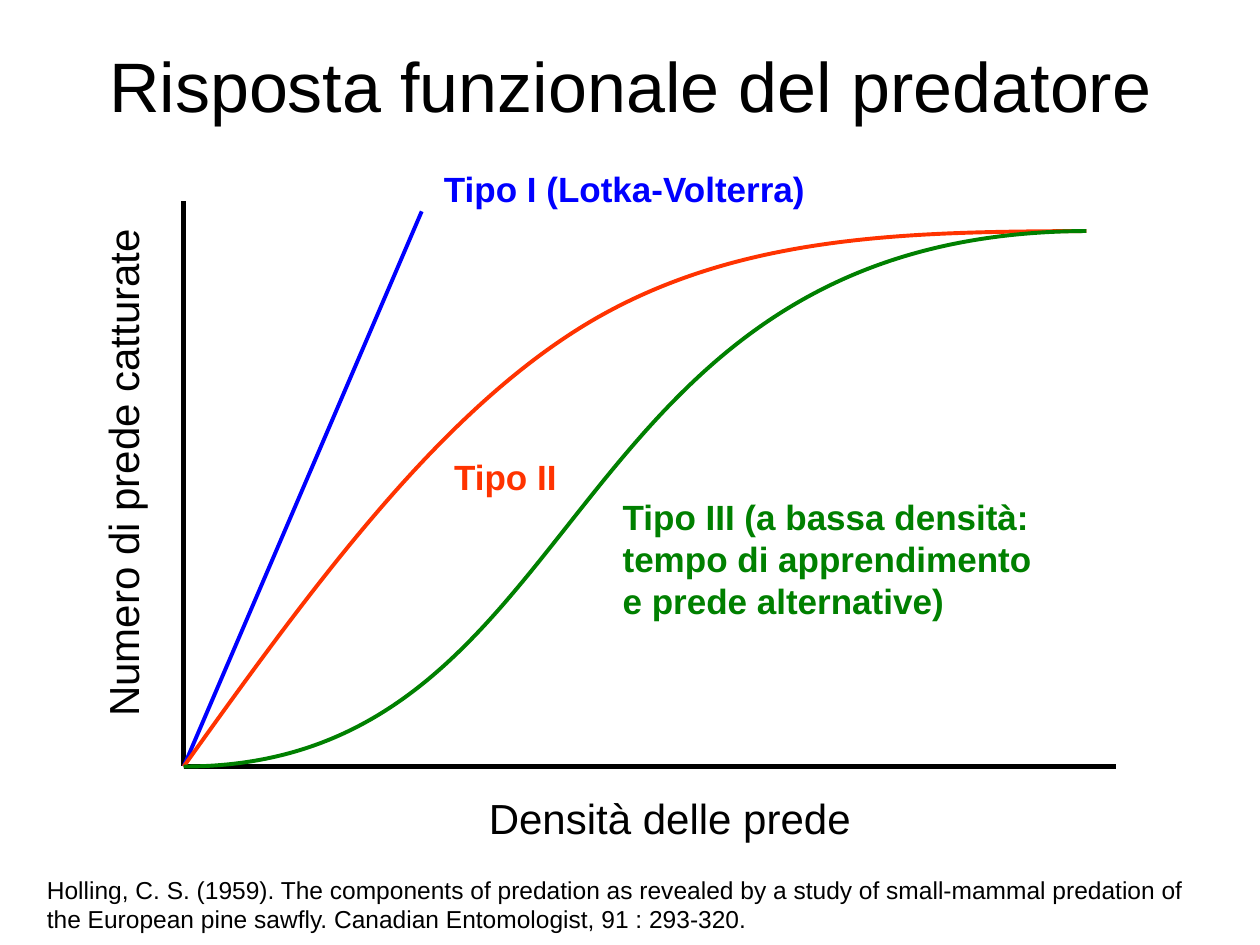
from lxml.etree import SubElement
from pptx import Presentation
from pptx.dml.color import RGBColor
from pptx.enum.shapes import MSO_CONNECTOR as Connector
from pptx.enum.text import MSO_ANCHOR as Anchor, MSO_AUTO_SIZE as AutoSize, PP_ALIGN as Align
from pptx.oxml.ns import qn
from pptx.util import Pt

FONT = "Arial"
COLORS = {"black": "000000", "type_1": "0000FF", "type_2": "FF3300", "type_3": "008000"}
ORIGIN = (105, 438)
PLATEAU = (620.8, 132)


def rgb(name):
    return RGBColor.from_string(COLORS[name])


def write_text(shape, text, size=20, color="black", bold=False, align=Align.LEFT,
               anchor=Anchor.TOP):
    frame = shape.text_frame
    frame.word_wrap = True
    frame.vertical_anchor = anchor
    paragraph = frame.paragraphs[0]
    paragraph.alignment = align
    run = paragraph.add_run()
    run.text = text
    font = run.font
    font.name, font.size, font.bold = FONT, Pt(size), bold
    font.color.rgb = rgb(color)


def add_title(slide, text):
    title = slide.shapes.title
    title.left, title.top, title.width, title.height = Pt(36), Pt(3.2), Pt(648), Pt(90)
    write_text(title, text, size=40, align=Align.CENTER, anchor=Anchor.MIDDLE)


def add_label(slide, text, box, rotation=0, **text_format):
    label = slide.shapes.add_textbox(*map(Pt, box))
    label.rotation = rotation
    write_text(label, text, **text_format)
    label.text_frame.auto_size = AutoSize.SHAPE_TO_FIT_TEXT


def add_line(slide, start, end, color="black", width=3):
    line = slide.shapes.add_connector(Connector.STRAIGHT, *map(Pt, start + end))
    line.line.color.rgb = rgb(color)
    line.line.width = Pt(width)
    SubElement(line._element.spPr, qn("a:effectLst"))


def bend_segments(shape):
    """Turn every three straight segments into one cubic Bezier segment."""
    outline = next(shape._element.iter(qn("a:path")))
    segments = outline.findall(qn("a:lnTo"))
    for first in range(0, len(segments), 3):
        bezier = SubElement(outline, qn("a:cubicBezTo"))
        for segment in segments[first:first + 3]:
            bezier.append(segment[0])
            outline.remove(segment)


def add_curve(slide, start, points, color):
    """Draw a Bezier curve; points hold two controls and an end per segment."""
    builder = slide.shapes.build_freeform(*map(Pt, start))
    builder.add_line_segments([tuple(map(Pt, point)) for point in points], close=False)
    curve = builder.convert_to_shape()
    bend_segments(curve)
    curve.shadow.inherit = False
    curve.fill.background()
    curve.line.color.rgb = rgb(color)
    curve.line.width = Pt(2.25)


def main():
    presentation = Presentation()
    presentation.slide_width, presentation.slide_height = Pt(720), Pt(540)
    slide = presentation.slides.add_slide(presentation.slide_layouts[5])

    add_title(slide, "Risposta funzionale del predatore")

    add_line(slide, (ORIGIN[0], 115), ORIGIN)
    add_line(slide, ORIGIN, (637.9, ORIGIN[1]))
    add_line(slide, ORIGIN, (241, 120.8), color="type_1", width=2.25)
    add_curve(slide, ORIGIN, [(177.8, 336.2), (251.3, 234.7), (337.7, 183.6),
                              (423.4, 133.2), (522, 132.5), PLATEAU], "type_2")
    add_curve(slide, ORIGIN, [(341.3, 438), (313.2, 133.2), PLATEAU], "type_3")

    add_label(slide, "Tipo I (Lotka-Volterra)", (246.6, 92.2, 244, 31),
              color="type_1", bold=True)
    add_label(slide, "Tipo II", (252.4, 257, 73.5, 31), color="type_2", bold=True)
    add_label(slide, "Tipo III (a bassa densità: tempo di apprendimento e prede alternative)",
              (348.7, 279.4, 260.6, 79.2), color="type_3", bold=True)

    add_label(slide, "Densità delle prede", (172.8, 449.3, 419.8, 36),
              size=24, align=Align.CENTER)
    add_label(slide, "Numero di prede catturate", (-139.9, 252.2, 419.8, 36),
              rotation=270, size=24, align=Align.CENTER)
    add_label(slide, "Holling, C. S. (1959). The components of predation as revealed by a study "
              "of small-mammal predation of the European pine sawfly. "
              "Canadian Entomologist, 91 : 293-320.", (19.7, 496.5, 674.6, 41), size=14)

    presentation.save("out.pptx")


if __name__ == "__main__":
    main()
